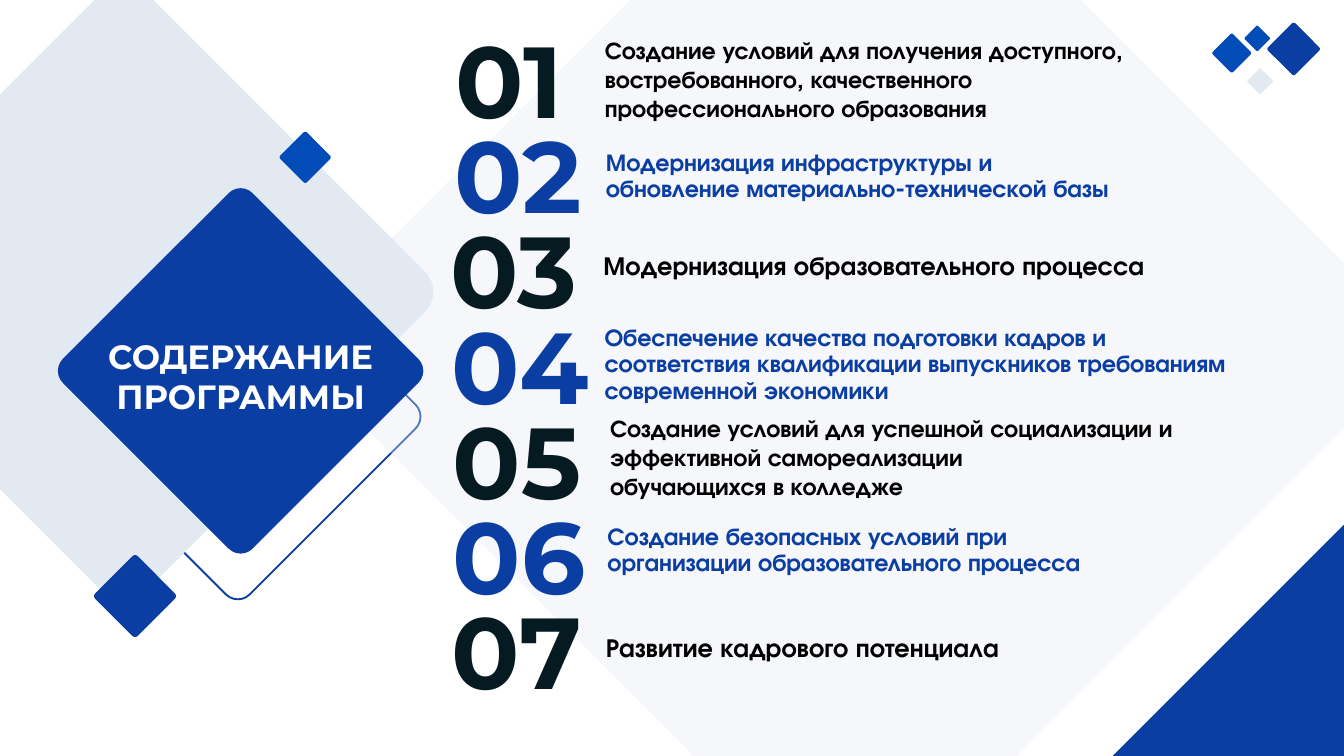
from math import sqrt

from lxml import etree
from pptx import Presentation
from pptx.dml.color import RGBColor
from pptx.enum.shapes import MSO_SHAPE
from pptx.enum.text import MSO_ANCHOR, MSO_AUTO_SIZE, PP_ALIGN
from pptx.oxml.ns import qn
from pptx.util import Pt

ROUNDED = MSO_SHAPE.ROUNDED_RECTANGLE
TOP, MIDDLE, BOTTOM = MSO_ANCHOR.TOP, MSO_ANCHOR.MIDDLE, MSO_ANCHOR.BOTTOM
LEFT, CENTER = PP_ALIGN.LEFT, PP_ALIGN.CENTER
NO_FIT = MSO_AUTO_SIZE.NONE

BLUE = RGBColor(0x0B, 0x3E, 0xA2)
BRIGHT = RGBColor(0x01, 0x4C, 0xB7)
MIST = RGBColor(0xE2, 0xE9, 0xF1)
INK = RGBColor(0x06, 0x1A, 0x21)
BLACK = RGBColor(0, 0, 0)
WHITE = RGBColor(0xFF, 0xFF, 0xFF)
HEAD_FONT, BODY_FONT = "Montserrat", "TeX Gyre Adventor"

ROUNDING = 0.063
SPAN = sqrt(2) - 2 * ROUNDING * (sqrt(2) - 1)
ROW_PITCH = 51

ITEMS = [
    (2.2, 61.3, 2, 12.9, ["Создание условий для получения доступного,",
                          "востребованного, качественного",
                          "профессионального образования"]),
    (1.5, 61.9, -5.8, 13, ["Модернизация инфраструктуры и",
                           "обновление материально-технической базы"]),
    (-0.7, 60.5, -15, 14, ["Модернизация образовательного процесса"]),
    (0, 61.2, 0.2, 13, ["Обеспечение качества подготовки кадров и",
                        "соответствия квалификации выпускников требованиям",
                        "современной экономики"]),
    (0.7, 64.1, 0.4, 12.9, ["Создание условий для успешной социализации и",
                            "эффективной самореализации",
                            "обучающихся в колледже"]),
    (0.7, 62.7, -9.6, 13, ["Создание безопасных условий при",
                           "организации образовательного процесса"]),
    (0, 61.9, -14.5, 14, ["Развитие кадрового потенциала"]),
]


def add_diamond(s, x, y, width, fill=None, line=None, alpha=None):
    """Draw a rounded square standing on its corner, width across corners."""
    side = width / SPAN
    inset = (width - side) / 2
    sp = s.shapes.add_shape(ROUNDED, Pt(x + inset), Pt(y + inset), Pt(side), Pt(side))
    sp.adjustments[0] = ROUNDING
    sp.rotation = 45
    sp.shadow.inherit = False
    if fill is None:
        sp.fill.background()
    else:
        sp.fill.solid()
        sp.fill.fore_color.rgb = fill
    if line is None:
        sp.line.fill.background()
    else:
        sp.line.color.rgb = line
        sp.line.width = Pt(1)
    if alpha is not None:
        color = sp.fill._xPr.find(qn("a:solidFill"))[0]
        etree.SubElement(color, qn("a:alpha")).set("val", str(alpha * 1000))


def write(sp, lines, font, anchor, align=LEFT, spacing=None, margins=None):
    """Fill a shape with one paragraph per line in one format."""
    tf = sp.text_frame
    frame = {"word_wrap": False, "auto_size": NO_FIT, "vertical_anchor": anchor}
    for name, value in {**frame, **(margins or {})}.items():
        setattr(tf, name, value)
    for i, line in enumerate(lines):
        p = tf.add_paragraph() if i else tf.paragraphs[0]
        p.alignment = align
        if spacing:
            p.line_spacing = spacing
        r = p.add_run()
        r.text = line
        color = font["color"]
        r.font.color.rgb = color
        for name in ("name", "size", "bold"):
            setattr(r.font, name, font[name])


def add_backdrop(s, x, y):
    """Place the large diamonds that lie behind the content."""
    add_diamond(s, x + 29.5, y + 125.3, 195.8, line=BLUE)
    add_diamond(s, x + 163.4, y - 109.4, 589.7, MIST, alpha=34)
    add_diamond(s, x - 99.4, y - 9.4, 331.5, MIST)
    add_diamond(s, x + 581, y + 273.6, 304.6, BLUE)


def add_cluster(s, x, y):
    """Place the group of small corner diamonds."""
    for dx, dy, width, color in [(29.6, 0, 28.1, BLUE), (0, 5.8, 20.9, BRIGHT),
                                 (17.3, 1.5, 13.7, BRIGHT), (18.8, 24.5, 13.7, MIST)]:
        add_diamond(s, x + dx, y + dy, width, color)


def add_title(s, x, y):
    """Place the blue title diamond with its accents and heading."""
    add_diamond(s, x, y, 195.8, BLUE)
    add_diamond(s, x + 118.8, y - 30.2, 27.4, BRIGHT)
    add_diamond(s, x + 19.4, y + 196.6, 43.9, BLUE)
    sp = s.shapes.title
    place = {"left": x + 8.6, "top": y + 75.6, "width": 178.6, "height": 87.1}
    for name, value in place.items():
        setattr(sp, name, Pt(value))
    font = {"name": HEAD_FONT, "size": Pt(18), "bold": True, "color": WHITE}
    write(sp, ["СОДЕРЖАНИЕ", "ПРОГРАММЫ"], font, TOP, CENTER)
    s.shapes.element.append(sp.element)


def add_items(s, x, y):
    """Place the numbered list, rows alternating dark and blue."""
    flush = {"margin_left": Pt(28), "margin_top": 0, "margin_right": 0, "margin_bottom": 0}
    for i, (number_dx, text_dx, text_dy, size, lines) in enumerate(ITEMS):
        top = y + i * ROW_PITCH
        is_blue = i % 2 == 1
        sp = s.shapes.add_textbox(Pt(x + number_dx), Pt(top), Pt(42.5), Pt(41.8))
        font = {"name": HEAD_FONT, "size": Pt(54), "bold": True,
                "color": BLUE if is_blue else INK}
        write(sp, [f"{i + 1:02}"], font, MIDDLE)
        sp = s.shapes.add_textbox(Pt(x + text_dx), Pt(top + text_dy), Pt(400), Pt(42.5))
        font = {"name": BODY_FONT, "size": Pt(size), "bold": True,
                "color": BLUE if is_blue else BLACK}
        write(sp, lines, font, BOTTOM, spacing=0.9 if is_blue else None, margins=flush)


def main():
    """Build the contents slide and save it."""
    prs = Presentation()
    prs.slide_width, prs.slide_height = Pt(720), Pt(405)
    s = prs.slides.add_slide(prs.slide_layouts[5])
    add_backdrop(s, 0, 0)
    add_cluster(s, 649.4, 12.2)
    add_title(s, 31, 100.8)
    add_items(s, 234.7, 21)
    prs.save("out.pptx")


if __name__ == "__main__":
    main()
